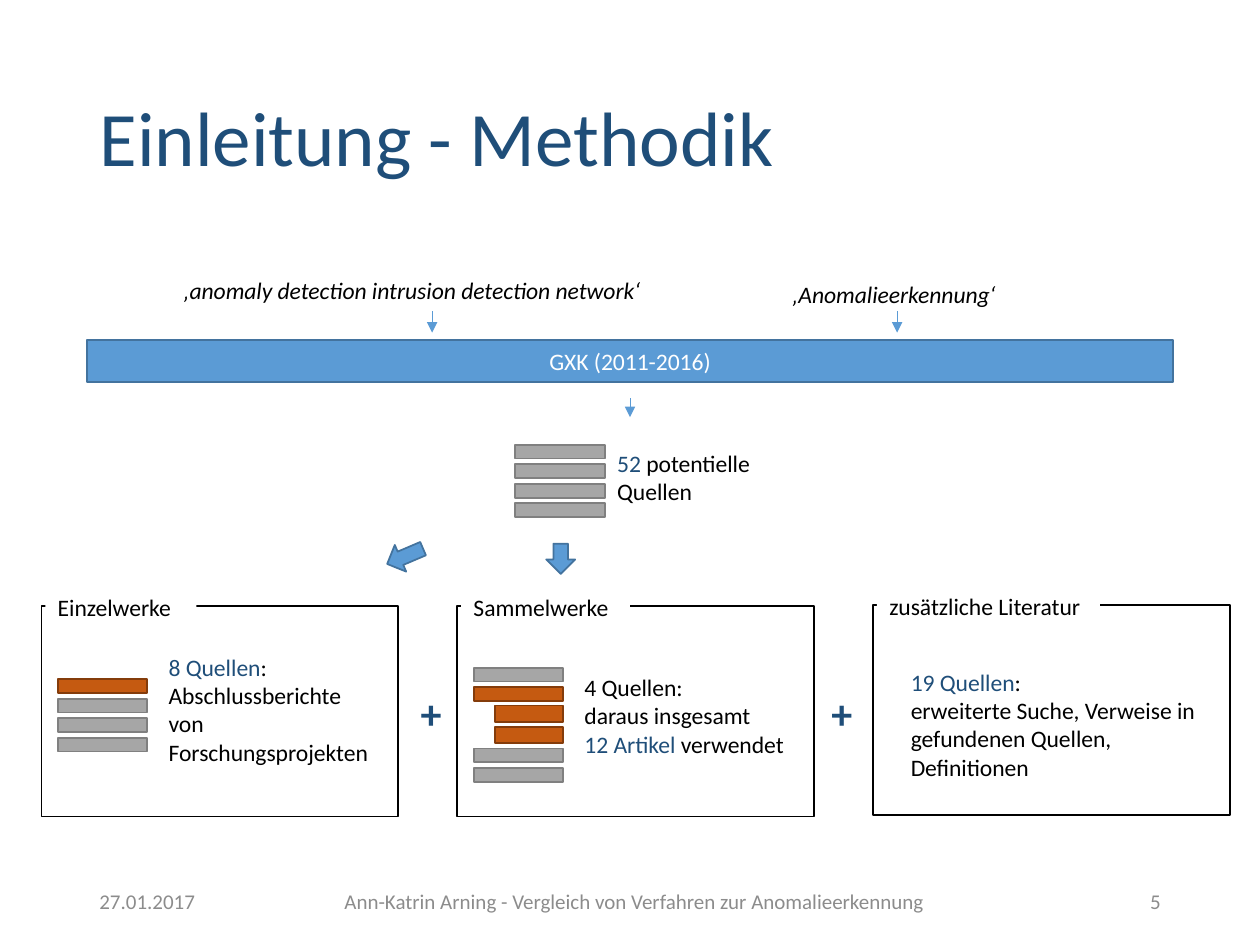
from lxml import etree
from pptx import Presentation
from pptx.dml.color import RGBColor
from pptx.enum.shapes import MSO_CONNECTOR, MSO_SHAPE
from pptx.enum.text import MSO_ANCHOR, PP_ALIGN
from pptx.oxml.ns import qn
from pptx.util import Inches, Pt

NAVY = RGBColor(0x1F, 0x4E, 0x79)
BLUE = RGBColor(0x5B, 0x9B, 0xD5)
BLUE_EDGE = RGBColor(0x43, 0x73, 0x9E)
GREY = RGBColor(0xA6, 0xA6, 0xA6)
GREY_EDGE = RGBColor(0x80, 0x80, 0x80)
ORANGE = RGBColor(0xC5, 0x5A, 0x11)
ORANGE_EDGE = RGBColor(0x84, 0x3C, 0x0B)
FOOTER_GREY = RGBColor(0x8C, 0x8C, 0x8C)
BLACK = RGBColor(0, 0, 0)
WHITE = RGBColor(0xFF, 0xFF, 0xFF)

TITLE = "Einleitung - Methodik"
DATABASE = "GXK (2011-2016)"
FOOTERS = [  # text, box, alignment
    ("27.01.2017", (0.69, 6.95, 2.25, 0.4), PP_ALIGN.LEFT),
    ("Ann-Katrin Arning - Vergleich von Verfahren zur Anomalieerkennung",
     (2.42, 7, 5.23, 0.3), PP_ALIGN.CENTER),
    ("5", (7.06, 6.95, 2.25, 0.4), PP_ALIGN.RIGHT),
]
QUERIES = [
    ("‚anomaly detection intrusion detection network‘", (1.36, 2.14, 4, 0.33)),
    ("‚Anomalieerkennung‘", (6.19, 2.17, 1.85, 0.33)),
]
DOWN_ARROWS = [(3.43, 2.47, 2.64), (7.12, 2.47, 2.64), (5, 3.16, 3.31)]  # x, from, to
BLOCK_ARROWS = [((3.06, 4.3, 0.31, 0.23), 156.9), ((4.33, 4.32, 0.24, 0.23), 90)]
POTENTIAL = [[("52", NAVY), (" potentielle Quellen", BLACK)]]
PANELS = [  # left, top, heading, heading width, text box, paragraphs of runs
    (0.33, 4.81, "Einzelwerke", 1.2, (1.24, 5.13, 1.86, 1.24),
     [[("8 Quellen", NAVY), (":", BLACK)],
      [("Abschlussberichte von Forschungsprojekten", BLACK)]]),
    (3.63, 4.81, "Sammelwerke", 1.34, (4.54, 5.29, 1.86, 1.01),
     [[("4 Quellen:", BLACK)],
      [("daraus insgesamt", BLACK)],
      [("12 Artikel ", NAVY), ("verwendet", BLACK)]]),
    (6.93, 4.8, "zusätzliche Literatur", 1.77, (7.13, 5.25, 2.49, 1.24),
     [[("19 Quellen", NAVY), (":", BLACK)],
      [("erweiterte Suche, Verweise in gefundenen Quellen, Definitionen", BLACK)]]),
]
BAR_W, BAR_H, BAR_STEP = 0.71, 0.11, 0.155
STACKS = [  # left, top, used (orange) or not, for each source
    (4.09, 3.53, [False] * 4),
    (0.46, 5.39, [True] + [False] * 3),
    (3.76, 5.3, [False, True]),
    (3.76, 5.94, [False] * 2),
]
ARTICLES = [(3.93, 5.6, 0.54, 0.13), (3.93, 5.77, 0.54, 0.13)]
PLUS_LEFTS = [3.24, 6.5]


def write(sp, paragraphs, size=13.5, align=PP_ALIGN.LEFT, anchor=MSO_ANCHOR.TOP,
          bold=False, italic=False):
    """Fill a shape with paragraphs, each a list of (text, colour) runs."""
    tf = sp.text_frame
    tf.word_wrap = True
    tf.vertical_anchor = anchor
    for i, runs in enumerate(paragraphs):
        p = tf.add_paragraph() if i else tf.paragraphs[0]
        p.alignment = align
        for text, color in runs:
            r = p.add_run()
            r.text = text
            r.font.name, r.font.size = "Calibri", Pt(size)
            r.font.bold, r.font.italic = bold, italic
            r.font.color.rgb = color


def add_text(s, box, paragraphs, **style):
    write(s.shapes.add_textbox(*map(Inches, box)), paragraphs, **style)


def add_box(s, box, fill=None, line=None, kind=MSO_SHAPE.RECTANGLE):
    sp = s.shapes.add_shape(kind, *map(Inches, box))
    sp.shadow.inherit = False
    if fill is None:
        sp.fill.background()
    else:
        sp.fill.solid()
        sp.fill.fore_color.rgb = fill
    if line is None:
        sp.line.fill.background()
    else:
        sp.line.color.rgb = line
        sp.line.width = Pt(1)
    return sp


def add_bar(s, box, used):
    add_box(s, box, *((ORANGE, ORANGE_EDGE) if used else (GREY, GREY_EDGE)))


def add_down_arrow(s, x, top, bottom):
    c = s.shapes.add_connector(MSO_CONNECTOR.STRAIGHT, *map(Inches, (x, top, x, bottom)))
    c.line.color.rgb = BLUE
    c.line.width = Pt(0.5)
    etree.SubElement(c.line._get_or_add_ln(), qn("a:tailEnd"), type="triangle")
    etree.SubElement(c._element.spPr, qn("a:effectLst"))


def main():
    prs = Presentation()
    prs.slide_width, prs.slide_height = Inches(10), Inches(7.5)
    s = prs.slides.add_slide(prs.slide_layouts[5])

    title = s.shapes.title
    title.left, title.top, title.width, title.height = map(Inches, (0.69, 0.4, 8.62, 1.45))
    write(title, [[(TITLE, NAVY)]], size=44, anchor=MSO_ANCHOR.MIDDLE)
    title.text_frame.paragraphs[0].line_spacing = 0.9

    for text, box, align in FOOTERS:
        add_text(s, box, [[(text, FOOTER_GREY)]], size=12, align=align,
                 anchor=MSO_ANCHOR.MIDDLE)
    for text, box in QUERIES:
        add_text(s, box, [[(text, BLACK)]], italic=True)

    database = add_box(s, (0.69, 2.7, 8.62, 0.33), BLUE, BLUE_EDGE)
    tf = database.text_frame
    tf.margin_top = tf.margin_bottom = Inches(0.04)
    write(database, [[(DATABASE, WHITE)]], align=PP_ALIGN.CENTER, anchor=MSO_ANCHOR.MIDDLE)
    for arrow in DOWN_ARROWS:
        add_down_arrow(s, *arrow)
    add_text(s, (4.8, 3.51, 1.8, 0.56), POTENTIAL)

    for left, top, heading, heading_w, text_box, paragraphs in PANELS:
        add_box(s, (left, top, 2.83, 1.67), line=BLACK)
        add_text(s, text_box, paragraphs)
        label = add_box(s, (left + 0.03, top - 0.15, heading_w, 0.33), WHITE)
        write(label, [[(heading, BLACK)]])

    for left, top, stack in STACKS:
        for i, used in enumerate(stack):
            add_bar(s, (left, top + i * BAR_STEP, BAR_W, BAR_H), used)
    for box in ARTICLES:
        add_bar(s, box, True)

    for box, angle in BLOCK_ARROWS:
        add_box(s, box, BLUE, BLUE_EDGE, MSO_SHAPE.RIGHT_ARROW).rotation = angle
    for left in PLUS_LEFTS:
        add_text(s, (left, 5.41, 0.4, 0.5), [[("+", NAVY)]], size=24, bold=True)

    prs.save("out.pptx")


if __name__ == "__main__":
    main()
